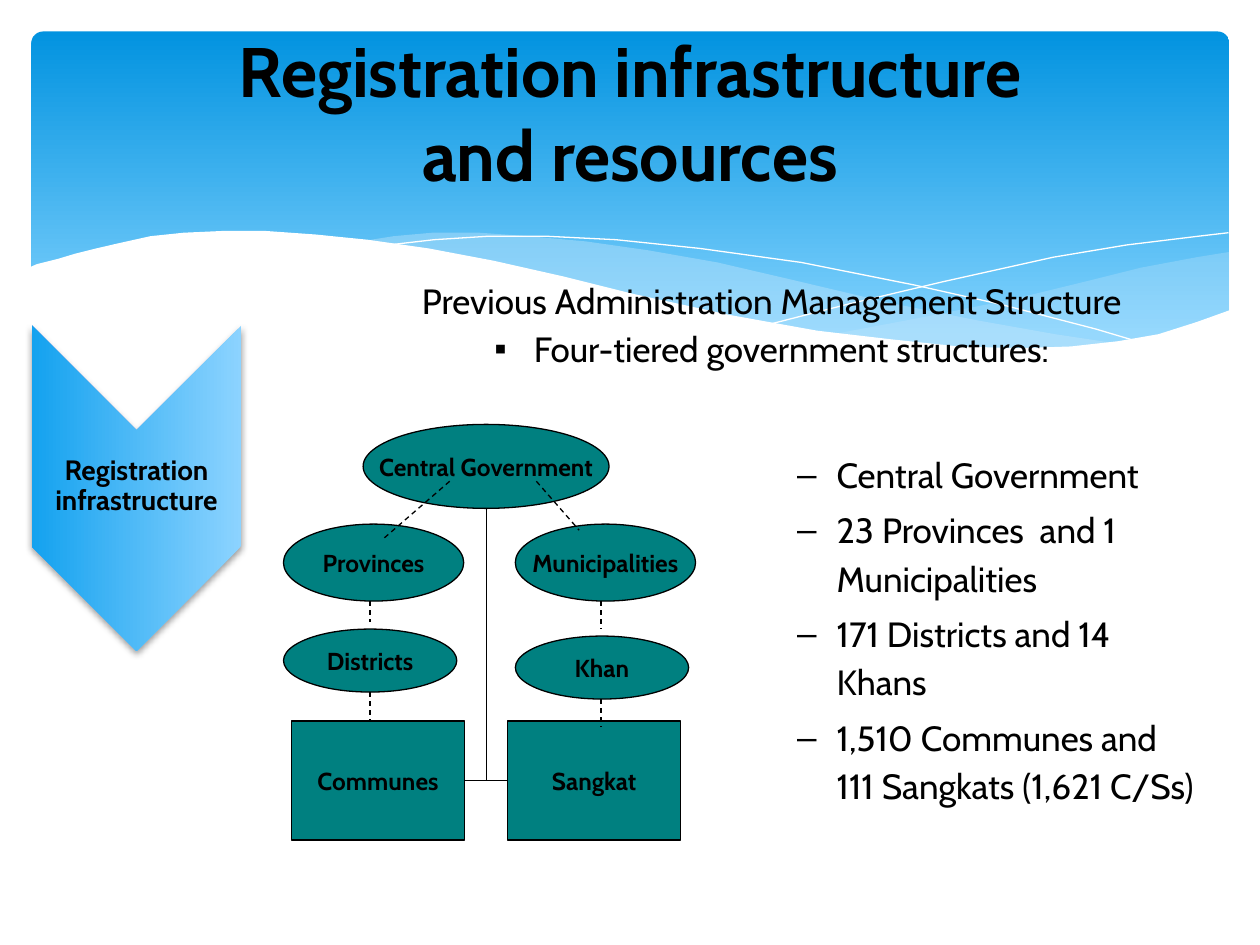
from lxml.etree import SubElement
from pptx import Presentation
from pptx.dml.color import RGBColor
from pptx.enum.dml import MSO_LINE
from pptx.enum.shapes import MSO_CONNECTOR, MSO_SHAPE
from pptx.enum.text import MSO_ANCHOR, MSO_AUTO_SIZE, PP_ALIGN
from pptx.oxml.ns import qn
from pptx.util import Pt

color = RGBColor.from_string


def write(frame, lines, size, bold=False, frame_format={}, **paragraph_format):
    """Fill a text frame with one paragraph per line and return the paragraphs."""
    for name, value in {"word_wrap": True, "auto_size": MSO_AUTO_SIZE.NONE, **frame_format}.items():
        setattr(frame, name, value)
    frame.text = "\n".join(lines)
    for paragraph in frame.paragraphs:
        for name, value in paragraph_format.items():
            setattr(paragraph, name, value)
        font = paragraph.runs[0].font
        for name, value in {"name": "Cabin", "size": Pt(size), "bold": bold}.items():
            setattr(font, name, value)
        font.color.rgb = color("000000")
    return frame.paragraphs


def add_bullet(paragraph, symbol, margin, hanging):
    properties = paragraph._p.get_or_add_pPr()
    properties.set("marL", str(Pt(margin)))
    properties.set("indent", str(-Pt(hanging)))
    bullet_color = SubElement(properties, qn("a:buClr"))
    SubElement(bullet_color, qn("a:srgbClr"), val="000000")
    SubElement(properties, qn("a:buFont"), typeface="Arial")
    SubElement(properties, qn("a:buChar"), char=symbol)


prs = Presentation()
prs.slide_width, prs.slide_height = Pt(720), Pt(540)
slide = prs.slides.add_slide(prs.slide_layouts[5])
shapes = slide.shapes

# Gradient shapes: the banner and the downward chevron
gradients = [
    (MSO_SHAPE.ROUNDED_RECTANGLE, (18, 18, 684.5, 194.5), 0.034, 0, [("0293E0", 0), ("83D3FE", 0.9)]),
    (MSO_SHAPE.CHEVRON, (-15, 219, 186, 120), 0.5, 90, [("8CD3FF", 0), ("14A2EF", 1)]),
]
gradient_shapes = []
for kind, box, adjustment, rotation, stops in gradients:
    shape = shapes.add_shape(kind, *map(Pt, box))
    shape.adjustments[0] = adjustment
    shape.rotation = rotation
    shape.shadow.inherit = False
    shape.line.fill.background()
    shape.fill.gradient()
    shape.fill.gradient_angle = 270
    for stop, (stop_color, position) in zip(shape.fill.gradient_stops, stops):
        stop.color.rgb = color(stop_color)
        stop.position = position
    gradient_shapes.append(shape)
banner, chevron = gradient_shapes

effects = chevron._element.spPr.find(qn("a:effectLst"))
shadow = SubElement(effects, qn("a:outerShdw"), blurRad=str(Pt(4)), dist=str(Pt(2)),
                    dir="5400000", rotWithShape="0")
shadow_color = SubElement(shadow, qn("a:srgbClr"), val="000000")
SubElement(shadow_color, qn("a:alpha"), val="38000")

# Waves: fill, opacity in percent, outline points; no fill means a thin white line
waves = [
    ("C6E7FC", 29, [(476, 191), (524, 182), (579, 171), (620, 161), (652, 153), (684, 147),
                    (702.5, 144), (702.5, 178), (683, 185), (663, 191), (640, 196), (615, 199),
                    (586, 200), (554, 199), (517, 195)]),
    ("C6E7FC", 40, [(206, 138), (225, 135), (247, 133), (274, 133), (302, 135), (335, 138),
                    (370, 143), (410, 150), (453, 160), (508, 173), (558, 183), (603, 191),
                    (643, 197), (610, 200), (573, 200), (539, 199), (500, 194), (457, 188),
                    (408, 179), (354, 167), (307, 156), (261, 146), (233, 141)]),
    (None, 100, [(222, 140), (248, 137), (279, 135), (312, 135), (352, 137), (400, 142),
                 (458, 150), (523, 163), (572, 174), (626, 188), (653, 196)]),
    (None, 100, [(441, 185), (484, 174), (539, 161), (602, 147), (644, 140), (685, 135),
                 (702, 133)]),
    ("FFFFFF", 100, [(703.5, 177), (684, 184), (662, 191), (639, 195), (612, 198), (582, 199),
                     (548, 198), (510, 194), (467, 189), (417, 180), (362, 168), (322, 158),
                     (282, 149), (245, 142), (210, 137), (180, 134), (152, 132), (127, 132),
                     (105, 133), (86, 135), (68, 139), (55, 142), (43, 145), (33, 148),
                     (21, 151), (16.5, 153), (16.5, 237), (703.5, 237)]),
]
for fill, opacity, outline in waves:
    start, *rest = [(Pt(x), Pt(y)) for x, y in outline]
    builder = shapes.build_freeform(*start)
    builder.add_line_segments(rest, close=fill is not None)
    wave = builder.convert_to_shape()
    wave.shadow.inherit = False
    if fill:
        wave.fill.solid()
        wave.fill.fore_color.rgb = color(fill)
        wave.line.fill.background()
        fill_color = wave._element.spPr.find(qn("a:solidFill"))[0]
        SubElement(fill_color, qn("a:alpha"), val=str(opacity * 1000))
    else:
        wave.fill.background()
        wave.line.color.rgb = color("FFFFFF")
        wave.line.width = Pt(0)

# The title and the chevron stand in front of the waves
title = shapes.title
for front in (title, chevron):
    shapes._spTree.append(front._element)
for side, value in {"left": 24, "top": 12, "width": 672, "height": 104.5}.items():
    setattr(title, side, Pt(value))
write(title.text_frame, ["Registration infrastructure", "and resources"], 40, True,
      {"vertical_anchor": MSO_ANCHOR.TOP}, alignment=PP_ALIGN.CENTER)

chevron_label = shapes.add_textbox(Pt(18), Pt(222), Pt(120), Pt(111.5))
write(chevron_label.text_frame, ["Registration infrastructure"], 16, True,
      {"vertical_anchor": MSO_ANCHOR.MIDDLE, "margin_left": Pt(1), "margin_right": Pt(1)},
      alignment=PP_ALIGN.CENTER, line_spacing=0.9)

heading = shapes.add_textbox(Pt(180), Pt(152.5), Pt(522), Pt(63.5))
heading_lines = write(
    heading.text_frame,
    ["Previous Administration Management Structure", " Four-tiered government structures:"],
    20, alignment=PP_ALIGN.CENTER, line_spacing=1.15)
add_bullet(heading_lines[1], "▪", 18, 18)

# Government tiers
tiers = [
    ("Central Government", MSO_SHAPE.OVAL, 207.5, 242.5, 140.5, 48),
    ("Provinces", MSO_SHAPE.OVAL, 162, 299.5, 103, 44),
    ("Municipalities", MSO_SHAPE.OVAL, 294.5, 299.5, 103, 44),
    ("Districts", MSO_SHAPE.OVAL, 162, 359.5, 99, 36),
    ("Khan", MSO_SHAPE.OVAL, 294.5, 363.5, 99, 36),
    ("Communes", MSO_SHAPE.RECTANGLE, 166.5, 412, 99, 68),
    ("Sangkat", MSO_SHAPE.RECTANGLE, 290, 412, 99, 68),
]
offices = {}
for label, kind, *box in tiers:
    office = shapes.add_shape(kind, *map(Pt, box))
    office.shadow.inherit = False
    office.fill.solid()
    office.fill.fore_color.rgb = color("008080")
    office.line.color.rgb = color("000000")
    office.line.width = Pt(0.75)
    write(office.text_frame, [label], 14, True,
          {"word_wrap": False, "vertical_anchor": MSO_ANCHOR.MIDDLE}, alignment=PP_ALIGN.CENTER)
    offices[label] = office

# Links between tiers: x1, y1, x2, y2, dashed
links = [
    (257, 275, 219.5, 307.5, True),
    (306.5, 275, 331, 303, True),
    (211.5, 343.5, 211.5, 355.5, True),
    (343.5, 343.5, 343.5, 359.5, True),
    (211.5, 395.5, 211.5, 412, True),
    (343.5, 399.5, 343.5, 415.5, True),
    (278, 290.5, 278, 446, False),
    (265.5, 446, 290, 446, False),
]
for *ends, dashed in links:
    link = shapes.add_connector(MSO_CONNECTOR.STRAIGHT, *map(Pt, ends))
    link.line.color.rgb = color("000000")
    link.line.width = Pt(0.75)
    if dashed:
        link.line.dash_style = MSO_LINE.DASH
    SubElement(link._element.spPr, qn("a:effectLst"))
link.begin_connect(offices["Communes"], 3)
link.end_connect(offices["Sangkat"], 1)

counts = shapes.add_textbox(Pt(412.5), Pt(252), Pt(277), Pt(240))
for count in write(counts.text_frame, [
        "Central Government",
        "23 Provinces  and 1 Municipalities",
        "171 Districts and 14 Khans",
        "1,510 Communes and 111 Sangkats (1,621 C/Ss)",
], 20, line_spacing=1.15, space_before=Pt(4), level=1):
    add_bullet(count, "–", 58.5, 22.5)

prs.save("out.pptx")
